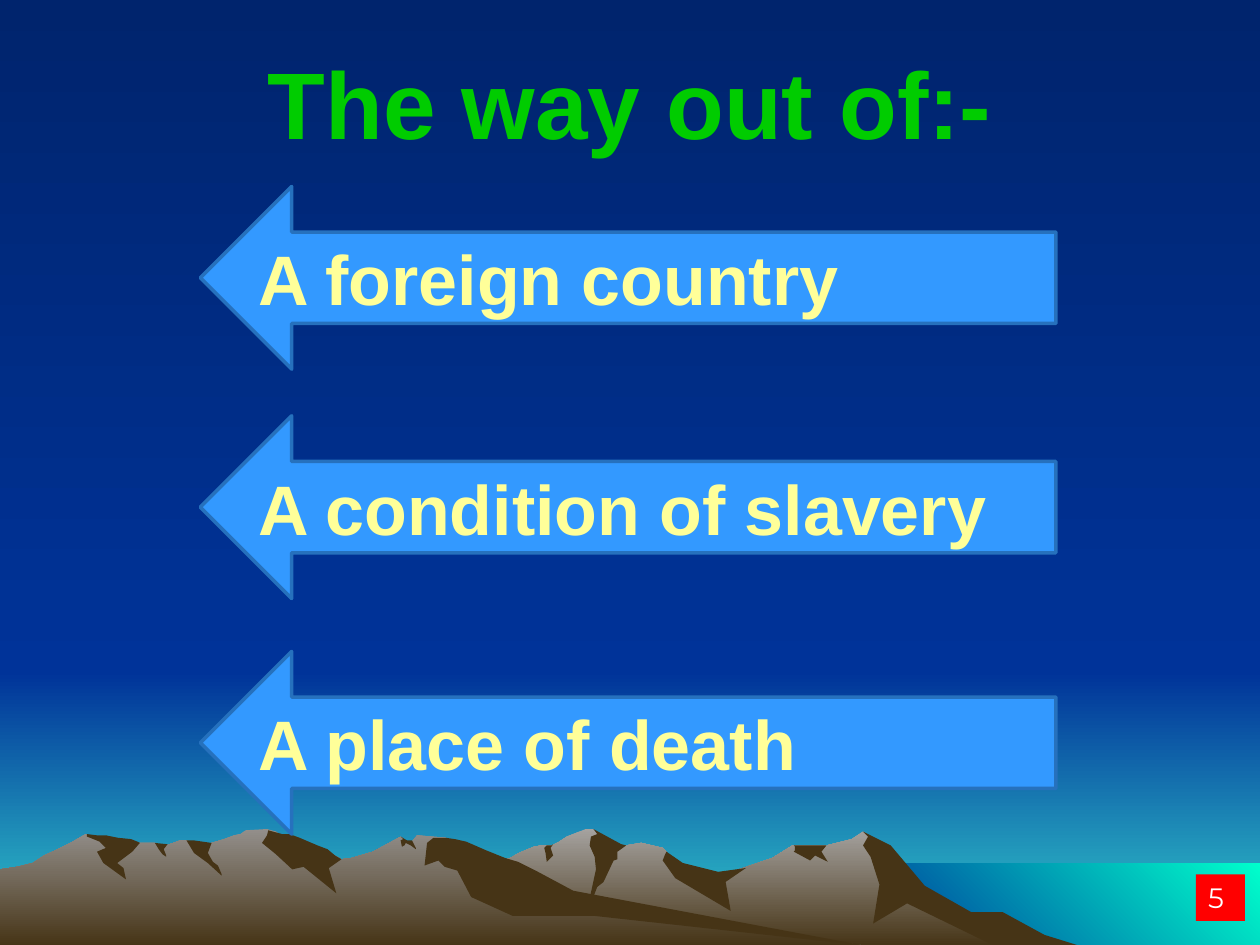
from pptx import Presentation
from pptx.dml.color import RGBColor
from pptx.enum.shapes import MSO_SHAPE
from pptx.enum.text import MSO_ANCHOR, PP_ALIGN
from pptx.util import Emu, Pt

PX = 9144  # EMU per px, 100 px to the inch
WIDTH, HEIGHT = 1000, 750
HORIZON = 533
LEFT_ARROW, RECTANGLE = MSO_SHAPE.LEFT_ARROW, MSO_SHAPE.RECTANGLE
LEFT, CENTER, MIDDLE = PP_ALIGN.LEFT, PP_ALIGN.CENTER, MSO_ANCHOR.MIDDLE

COLORS = {
    "night": "001847", "dusk": "00246D", "blue": "003399", "haze": "33CCCC",
    "sea": "00FFCC", "right_peak": "A5A29F", "left_peak": "938F8B",
    "rock": "463416", "title": "00CC00", "arrow": "3399FF",
    "arrow_edge": "2671BD", "arrow_text": "FFFF99",
    "number_box": "FF0000", "number": "FFFFFF",
}

TITLE = "The way out of:-"
WAYS_OUT = [("A foreign country", 148), ("A condition of slavery", 330),
            ("A place of death", 517)]
PAGE_NUMBER = "5"

# Bands: left, top, right, bottom, first colour, last colour, angle
BANDS = [
    (0, HORIZON, WIDTH, HEIGHT, "blue", "haze", 270),
    (0, 0, WIDTH, HORIZON, "dusk", "blue", 270),
    (683, 685, WIDTH, HEIGHT, "blue", "sea", 45),
]

RIGHT_RANGE = [
    (802, 740), (778, 727), (764, 723), (723, 698), (702, 671), (685, 660),
    (676, 666), (656, 671), (629, 671), (613, 681), (566, 697), (536, 690),
    (529, 676), (526, 673), (509, 669), (497, 671), (486, 673), (474, 661),
    (471, 658), (465, 658), (450, 664), (444, 668), (438, 671), (430, 671),
    (424, 672), (412, 677), (405, 681), (399, 683), (394, 685), (355, 698),
    (327, 709), (277, 739), (258, 751), (821, 751),
]
RIGHT_SHADOWS = [
    [(796, 724), (771, 724), (734, 703), (707, 671), (685, 660), (689, 664),
     (685, 671), (691, 680), (698, 702), (693, 733), (720, 717), (792, 752),
     (858, 751), (829, 742)],
    [(471, 658), (474, 662), (469, 664), (468, 671), (472, 680), (473, 690),
     (465, 727), (474, 704), (479, 700), (487, 683), (490, 682), (490, 676),
     (497, 671), (493, 670)],
    [(529, 676), (528, 678), (526, 683), (536, 697), (580, 723), (576, 700),
     (592, 689), (570, 692), (542, 685)],
    [(650, 671), (630, 671), (631, 672), (631, 675), (630, 676), (643, 683),
     (647, 679), (657, 684), (652, 676), (656, 671)],
    [(433, 677), (432, 673), (434, 671), (438, 671), (439, 670), (437, 673),
     (439, 679), (434, 684)],
]
LEFT_RANGE = [
    (690, 751), (667, 748), (432, 712), (354, 665), (331, 663), (327, 668),
    (323, 668), (318, 664), (296, 676), (279, 681), (271, 682), (260, 676),
    (236, 681), (223, 663), (219, 660), (212, 658), (195, 659), (191, 662),
    (186, 663), (178, 666), (168, 669), (160, 671), (148, 667), (143, 667),
    (132, 671), (128, 671), (123, 669), (111, 669), (94, 671), (68, 662),
    (56, 669), (46, 674), (35, 679), (26, 685), (14, 688), (0, 690), (0, 751),
]
LEFT_SHADOWS = [
    [(212, 663), (208, 669), (219, 678), (232, 690), (241, 688), (267, 709),
     (261, 689), (271, 682), (266, 679), (260, 674), (252, 671), (238, 665),
     (230, 662), (224, 662), (213, 659)],
    [(370, 668), (361, 666), (354, 665), (344, 665), (339, 669), (337, 687),
     (348, 683), (353, 688), (363, 691), (374, 712), (407, 727), (472, 727),
     (690, 751), (683, 750), (455, 707), (427, 692), (411, 684), (401, 681),
     (386, 675)],
    [(318, 667), (320, 666), (318, 664), (323, 667), (327, 667), (330, 673),
     (330, 674), (326, 671), (322, 669), (321, 671), (319, 672)],
    [(154, 667), (161, 668), (168, 669), (165, 677), (169, 684), (173, 687),
     (176, 694), (176, 695), (165, 685), (154, 677), (148, 667)],
    [(133, 670), (130, 674), (132, 679), (132, 680), (129, 678), (126, 674),
     (123, 669)],
    [(109, 668), (111, 669), (105, 676), (93, 685), (98, 689), (100, 698),
     (82, 685), (77, 676), (84, 673), (79, 668), (69, 664), (69, 662),
     (77, 663), (84, 663), (94, 665), (104, 666)],
]
RANGES = [(RIGHT_RANGE, "right_peak", RIGHT_SHADOWS),
          (LEFT_RANGE, "left_peak", LEFT_SHADOWS)]


def rgb(name):
    return RGBColor.from_string(COLORS[name])


def fill_solid(shape, color):
    shape.fill.solid()
    shape.fill.fore_color.rgb = rgb(color)


def fill_gradient(fill, first, last, angle=270):
    """Blend two colours; the angle runs counter-clockwise, 270 is downwards."""
    fill.gradient()
    fill.gradient_angle = angle
    for stop, color in zip(fill.gradient_stops, (first, last)):
        stop.color.rgb = rgb(color)


def add_outline(points):
    builder = slide.shapes.build_freeform(*points[0], scale=float(PX))
    builder.add_line_segments(points[1:], close=True)
    outline = builder.convert_to_shape()
    outline.shadow.inherit = False
    outline.line.fill.background()
    return outline


def place(shape, *box):
    shape.left, shape.top, shape.width, shape.height = (Emu(v * PX) for v in box)


def write(shape, text, size, color, align=LEFT, font="Arial", bold=True):
    frame = shape.text_frame
    frame.text = text
    frame.word_wrap = True
    frame.vertical_anchor = MIDDLE
    paragraph = frame.paragraphs[0]
    paragraph.alignment = align
    paragraph.font.name = font
    paragraph.font.size = Pt(size)
    paragraph.font.bold = bold
    paragraph.font.color.rgb = rgb(color)


def add_label(preset, box, fill):
    label = slide.shapes.add_shape(preset, *(Emu(v * PX) for v in box))
    label.shadow.inherit = False
    fill_solid(label, fill)
    return label


deck = Presentation()
deck.slide_width, deck.slide_height = Emu(WIDTH * PX), Emu(HEIGHT * PX)
slide = deck.slides.add_slide(deck.slide_layouts[5])
fill_gradient(slide.background.fill, "night", "blue")

for left, top, right, bottom, first, last, angle in BANDS:
    band = add_outline([(right, bottom), (left, bottom), (left, top), (right, top)])
    fill_gradient(band.fill, first, last, angle)

for ridge, peak, shadows in RANGES:
    fill_gradient(add_outline(ridge).fill, peak, "rock")
    for shadow in shadows:
        fill_solid(add_outline(shadow), "rock")

title = slide.shapes.title
place(title, 0, 30, WIDTH, 101)
write(title, TITLE, 54, "title", CENTER)
slide.shapes._spTree.append(title._element)  # bring in front of the sky

for way, top in WAYS_OUT:
    arrow = add_label(LEFT_ARROW, (159, top, 679, 145), "arrow")
    arrow.line.color.rgb = rgb("arrow_edge")
    arrow.line.width = Pt(2)
    write(arrow, way, 40, "arrow_text")

number_box = add_label(RECTANGLE, (949, 694, 39, 37), "number_box")
number_box.line.fill.background()
write(number_box, PAGE_NUMBER, 16, "number", font="Montserrat", bold=False)

deck.save("out.pptx")
